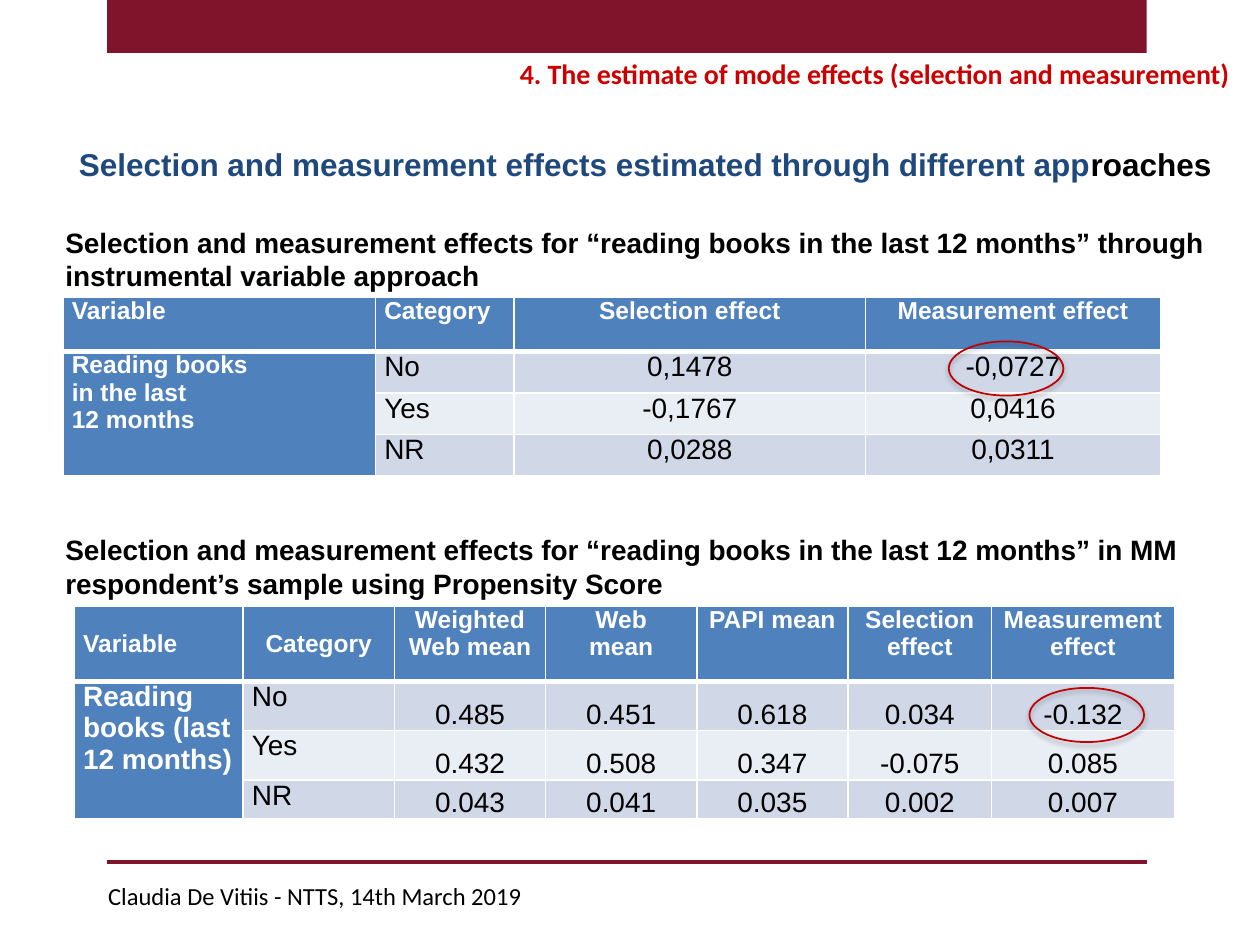
from lxml import etree
from pptx import Presentation, util as u
from pptx.dml.color import RGBColor
from pptx.enum import shapes, text
from pptx.oxml.ns import qn

THEME = {
    "maroon": "7F142A", "topic": "CC0000", "ring": "C00000", "navy": "1F497D",
    "ink": "000000", "paper": "FFFFFF", "head": "4F81BD", "bands": ("D0D8E8", "E9EDF4"),
    "sans": "Arial", "display": "Calibri",
    "title": 18, "body": 16, "small": 14,
}
JUSTIFY, CENTER, LEFT, RIGHT = (text.PP_ALIGN.JUSTIFY, text.PP_ALIGN.CENTER,
                                text.PP_ALIGN.LEFT, text.PP_ALIGN.RIGHT)
TOP, MIDDLE, BOTTOM = text.MSO_ANCHOR.TOP, text.MSO_ANCHOR.MIDDLE, text.MSO_ANCHOR.BOTTOM

prs = Presentation()
prs.slide_width, prs.slide_height = u.Inches(10), u.Inches(7.5)
slide = prs.slides.add_slide(prs.slide_layouts[6])

# Grid of 100 columns by 75 rows
COL, ROW = prs.slide_width / 100, prs.slide_height / 75


def grid(left, top, width, height):
    return [round(n * unit) for n, unit in zip((left, top, width, height), (COL, ROW) * 2)]


def style(font, size, color, bold=False, face=THEME["sans"]):
    font.size, font.bold, font.name = u.Pt(size), bold, face
    font.color.rgb = RGBColor.from_string(color)


# Top band and footer rule
band = slide.shapes.add_shape(shapes.MSO_SHAPE.RECTANGLE, *grid(8.5, 0, 82.5, 4.2))
band.fill.solid()
band.fill.fore_color.rgb = RGBColor.from_string(THEME["maroon"])
band.line.fill.background()
band.shadow.inherit = False

rule = slide.shapes.add_connector(shapes.MSO_CONNECTOR.STRAIGHT, *grid(8.5, 68.4, 91, 68.4))
rule.line.color.rgb = RGBColor.from_string(THEME["maroon"])
rule.line.width = u.Pt(2)
etree.SubElement(rule.element.spPr, qn("a:effectLst"))

# Headings, captions and footer: place, wrap, alignment, size, bold, face, runs
sans, display, ink = THEME["sans"], THEME["display"], THEME["ink"]
captioned = "Selection and measurement effects for “reading books in the last 12 months” "
texts = [
    ((5, 11, 92.4, 4), True, CENTER, THEME["title"], True, sans,
     [("Selection and measurement effects estimated through different app", THEME["navy"]),
      ("roaches", ink)]),
    ((4.2, 17.4, 93.2, 6.4), True, LEFT, THEME["body"], True, sans,
     [(captioned + "through instrumental variable approach", ink)]),
    ((4.2, 41.8, 92, 6.4), True, LEFT, THEME["body"], True, sans,
     [(captioned + "in MM respondent’s sample using Propensity Score", ink)]),
    ((9, 4, 89.6, 3.5), True, RIGHT, THEME["body"], True, display,
     [("4. The estimate of mode effects (selection and measurement)", THEME["topic"])]),
    ((7.6, 69.4, 36.2, 3.4), False, LEFT, THEME["small"], False, display,
     [("Claudia De Vitiis - NTTS, 14th March 2019", ink)]),
]
for place, wrap, align, size, bold, face, runs in texts:
    frame = slide.shapes.add_textbox(*grid(*place)).text_frame
    frame.word_wrap = wrap
    line = frame.paragraphs[0]
    line.alignment = align
    style(line.font, size, runs[0][1], bold, face)
    for words, color in runs:
        run = line.add_run()
        run.text = words
        if color != runs[0][1]:
            run.font.color.rgb = RGBColor.from_string(color)

# Effect tables: the first two columns label the rows, the others hold values
tables = [
    {"place": (5, 23.6), "cols": [24.8, 11, 27.9, 23.4], "rows": [4.3, 3.3, 3.3, 3.3],
     "label_size": THEME["small"], "value_anchor": TOP,
     "label_heads": [(JUSTIFY, TOP), (JUSTIFY, TOP)],
     "cells": [["Variable", "Category", "Selection effect", "Measurement effect"],
               ["Reading books\nin the last\n12 months", "No", "0,1478", "-0,0727"],
               ["", "Yes", "-0,1767", "0,0416"],
               ["", "NR", "0,0288", "0,0311"]]},
    {"place": (5.9, 48.1), "cols": [13.4, 12, 12, 12, 12, 11.4, 14.5],
     "rows": [6, 3.9, 3.9, 3.1],
     "label_size": THEME["body"], "value_anchor": BOTTOM,
     "label_heads": [(LEFT, MIDDLE), (CENTER, MIDDLE)],
     "cells": [["Variable", "Category", "Weighted Web mean", "Web\nmean", "PAPI mean",
                "Selection effect", "Measurement effect"],
               ["Reading books (last\n12 months)", "No",
                "0.485", "0.451", "0.618", "0.034", "-0.132"],
               ["", "Yes", "0.432", "0.508", "0.347", "-0.075", "0.085"],
               ["", "NR", "0.043", "0.041", "0.035", "0.002", "0.007"]]},
]
for effects in tables:
    cols, rows = effects["cols"], effects["rows"]
    table = slide.shapes.add_table(
        len(rows), len(cols), *grid(*effects["place"], sum(cols), sum(rows))).table
    for column, width in zip(table.columns, cols):
        column.width = round(width * COL)
    for row, height in zip(table.rows, rows):
        row.height = round(height * ROW)
    table.cell(1, 0).merge(table.cell(len(rows) - 1, 0))

    for r, entries in enumerate(effects["cells"]):
        for c, entry in enumerate(entries):
            cell = table.cell(r, c)
            cell.margin_left = cell.margin_right = round(0.7 * COL)
            cell.margin_top = cell.margin_bottom = 0

            # White borders, thick under the header
            edges = {"lnL": 1, "lnR": 1, "lnT": 3 if r == 1 else 1, "lnB": 3 if r == 0 else 1}
            for edge, points in edges.items():
                border = etree.SubElement(cell._tc.get_or_add_tcPr(), qn(f"a:{edge}"),
                                          w=str(u.Pt(points)))
                paint = etree.SubElement(border, qn("a:solidFill"))
                etree.SubElement(paint, qn("a:srgbClr"), val=THEME["paper"])

            strong = r == 0 or c == 0
            cell.fill.solid()
            cell.fill.fore_color.rgb = RGBColor.from_string(
                THEME["head"] if strong else THEME["bands"][(r - 1) % 2])
            if not entry:
                continue

            if r == 0:
                size = THEME["small"]
                align, anchor = effects["label_heads"][c] if c < 2 else (CENTER, TOP)
            else:
                size = effects["label_size"] if c == 0 else THEME["body"]
                align, anchor = (JUSTIFY, TOP) if c < 2 else (CENTER, effects["value_anchor"])
            cell.vertical_anchor = anchor
            cell.text = entry
            for line in cell.text_frame.paragraphs:
                line.alignment = align
                style(line.font, size, THEME["paper"] if strong else ink, strong)

# Rings around the key measurement effects
for left, top in [(75.3, 27.1), (81.7, 54.6)]:
    ring = slide.shapes.add_shape(shapes.MSO_SHAPE.OVAL, *grid(left, top, 9.1, 4.3))
    ring.fill.background()
    ring.line.color.rgb = RGBColor.from_string(THEME["ring"])
    ring.line.width = u.Pt(1)
    ring.shadow.inherit = False
    shade = etree.SubElement(ring.element.spPr.find(qn("a:effectLst")), qn("a:outerShdw"),
                             blurRad=str(u.Pt(3.1)), dist=str(u.Pt(1.8)),
                             dir="5400000", rotWithShape="0")
    tint = etree.SubElement(shade, qn("a:srgbClr"), val=ink)
    etree.SubElement(tint, qn("a:alpha"), val="35000")

prs.save("out.pptx")
